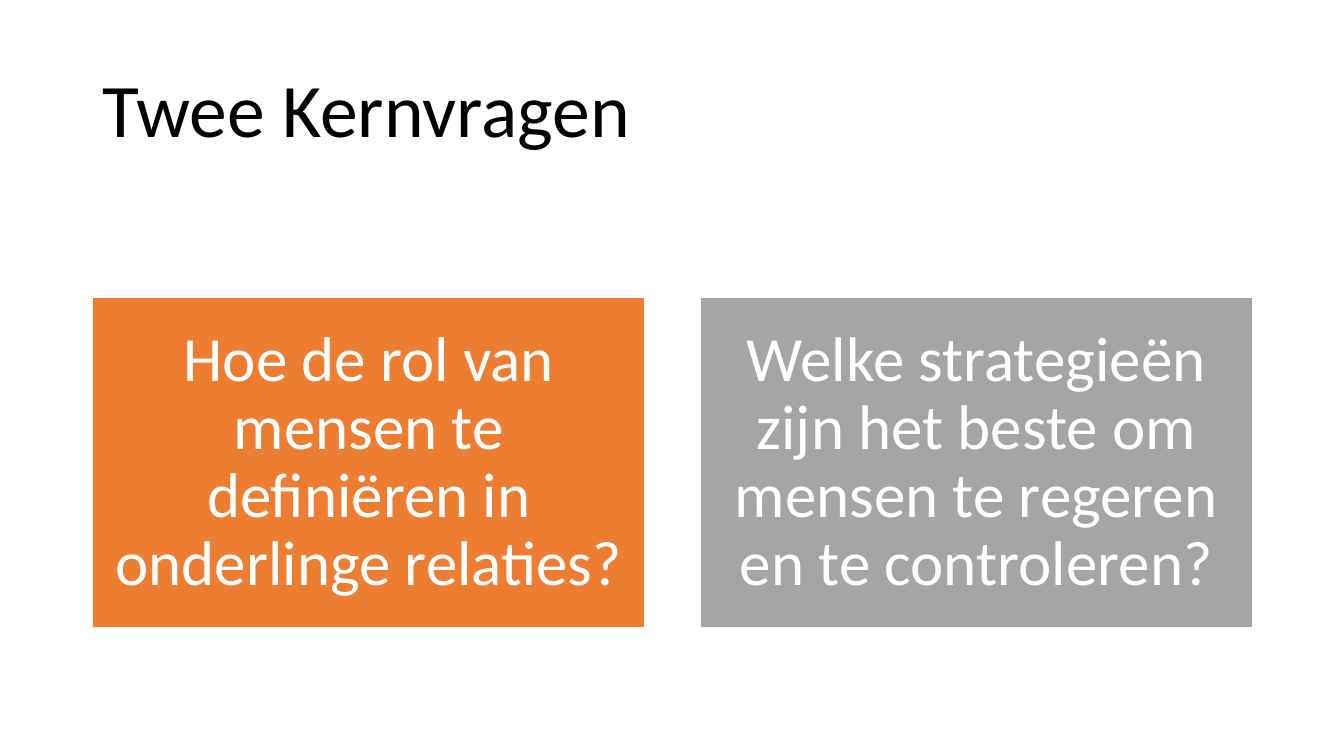
from pptx import Presentation
from pptx.dml.color import RGBColor
from pptx.enum.shapes import MSO_SHAPE as Shape
from pptx.enum.text import MSO_ANCHOR as Anchor, PP_ALIGN as Align
from pptx.util import Inches, Pt

BLACK = RGBColor(0x00, 0x00, 0x00)
WHITE = RGBColor(0xFF, 0xFF, 0xFF)
ORANGE = RGBColor(0xED, 0x7D, 0x31)
GREY = RGBColor(0xA5, 0xA5, 0xA5)

QUESTIONS = [
    ("Hoe de rol van mensen te definiëren in onderlinge relaties?", ORANGE),
    ("Welke strategieën zijn het beste om mensen te regeren en te controleren?", GREY),
]


def write(tf, text, size, color, align, inset_x=0.1, inset_y=0.05, font="Calibri"):
    tf.word_wrap = True
    tf.vertical_anchor = Anchor.MIDDLE
    tf.margin_left = tf.margin_right = Inches(inset_x)
    tf.margin_top = tf.margin_bottom = Inches(inset_y)
    p = tf.paragraphs[0]
    p.alignment = align
    p.line_spacing = 0.9
    r = p.add_run()
    r.text = text
    r.font.name = font
    r.font.size = Pt(size)
    r.font.color.rgb = color


class QuestionSlide:
    left, width, gap, columns = 0.92, 11.5, 0.55, 2

    def __init__(self, prs):
        self.s = prs.slides.add_slide(prs.slide_layouts[5])

    def title(self, text, top, height):
        sp = self.s.shapes.title
        sp.left, sp.top = Inches(self.left), Inches(top)
        sp.width, sp.height = Inches(self.width), Inches(height)
        write(sp.text_frame, text, 54, BLACK, Align.LEFT)

    def card(self, column, text, fill, top, height):
        width = (self.width - self.gap * (self.columns - 1)) / self.columns
        left = self.left + column * (width + self.gap)
        sp = self.s.shapes.add_shape(
            Shape.RECTANGLE, Inches(left), Inches(top), Inches(width), Inches(height))
        sp.shadow.inherit = False
        sp.fill.solid()
        sp.fill.fore_color.rgb = fill
        sp.line.color.rgb = WHITE
        sp.line.width = Pt(1)
        write(sp.text_frame, text, 45, WHITE, Align.CENTER, inset_x=0.19, inset_y=0.19)


def main():
    prs = Presentation()
    prs.slide_width, prs.slide_height = Inches(13.33), Inches(7.5)
    slide = QuestionSlide(prs)
    slide.title("Twee Kernvragen", top=0.4, height=1.45)
    for column, (text, fill) in enumerate(QUESTIONS):
        slide.card(column, text, fill, top=2.95, height=3.28)
    prs.save("out.pptx")


if __name__ == "__main__":
    main()
